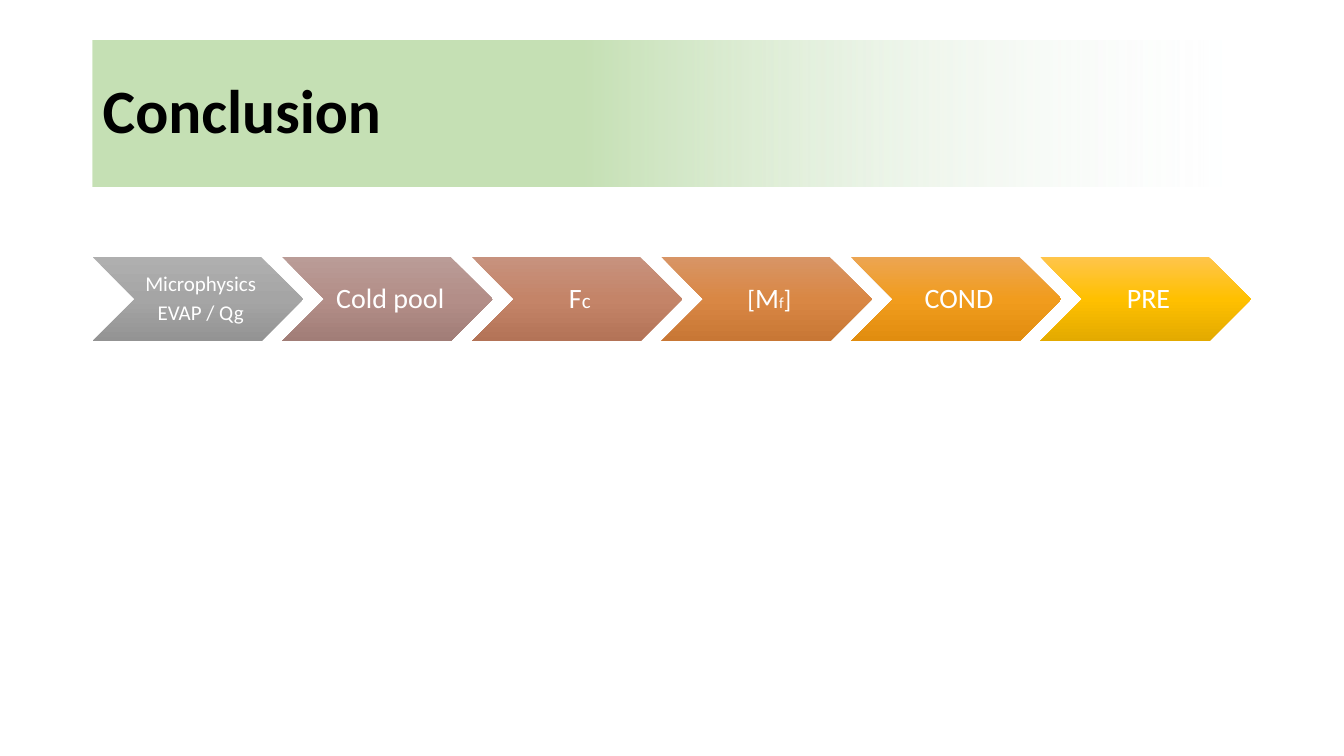
"""Build the conclusion slide with a chain of process chevrons."""
from lxml.etree import SubElement
from pptx import Presentation
from pptx.dml.color import RGBColor
from pptx.enum.shapes import MSO_SHAPE as Shape
from pptx.enum.text import MSO_ANCHOR as Anchor, MSO_AUTO_SIZE as AutoSize, PP_ALIGN as Align
from pptx.oxml.ns import qn
from pptx.util import Pt

BLACK = RGBColor(0x00, 0x00, 0x00)
WHITE = RGBColor(0xFF, 0xFF, 0xFF)
CLEAR = RGBColor(0xF7, 0xFA, 0xFD)
GREEN = RGBColor(0xC5, 0xE0, 0xB4)
GREYS = RGBColor(0xAF, 0xAF, 0xAF), RGBColor(0xA5, 0xA5, 0xA5), RGBColor(0x93, 0x93, 0x93)
MAUVES = RGBColor(0xBA, 0x9C, 0x97), RGBColor(0xB3, 0x8E, 0x88), RGBColor(0xA1, 0x7D, 0x77)
CLAYS = RGBColor(0xC7, 0x92, 0x7E), RGBColor(0xC4, 0x84, 0x68), RGBColor(0xB3, 0x73, 0x57)
RUSTS = RGBColor(0xD8, 0x95, 0x66), RGBColor(0xD9, 0x87, 0x44), RGBColor(0xC8, 0x77, 0x35)
ORANGES = RGBColor(0xEC, 0xA5, 0x52), RGBColor(0xF1, 0x9C, 0x1D), RGBColor(0xE1, 0x8D, 0x0F)
GOLDS = RGBColor(0xFF, 0xC5, 0x4B), RGBColor(0xFF, 0xC0, 0x00), RGBColor(0xE3, 0xAA, 0x00)

LEFT = 66.2
CHEVRON_TOP, CHEVRON_WIDTH, CHEVRON_HEIGHT, CHEVRON_PITCH = 183.6, 150.4, 60.2, 135.4
STEPS = [
    (GREYS, [[("Microphysics", 15)], [("EVAP / Qg", 15)]]),
    (MAUVES, [[("Cold pool", 20)]]),
    (CLAYS, [[("F", 20), ("c", 15)]]),
    (RUSTS, [[("[", 18), ("M", 20), ("f", 11), ("]", 18)]]),
    (ORANGES, [[("COND", 20)]]),
    (GOLDS, [[("PRE", 20)]]),
]


def apply(target, values):
    for name, value in values.items():
        setattr(target, name, value)


class SlideBuilder:
    font_name = "Calibri"
    line_spacing = 0.9

    def __init__(self, presentation):
        self.slide = presentation.slides.add_slide(presentation.slide_layouts[5])

    def gradient(self, shape, angle, stops):
        shape.fill.gradient()
        shape.fill.gradient_angle = angle
        stop_list = shape.element.spPr.find(qn("a:gradFill")).find(qn("a:gsLst"))
        for stop in list(stop_list):
            stop_list.remove(stop)
        for position, color, alpha in stops:
            stop = SubElement(stop_list, qn("a:gs"), pos=str(position * 1000))
            rgb = SubElement(stop, qn("a:srgbClr"), val=str(color))
            if alpha < 100:
                SubElement(rgb, qn("a:alpha"), val=str(alpha * 1000))

    def add_runs(self, paragraph, runs, color, bold, **layout):
        apply(paragraph, {"line_spacing": self.line_spacing, **layout})
        for text, size in runs:
            run = paragraph.add_run()
            run.text = text
            apply(run.font, {"name": self.font_name, "size": Pt(size), "bold": bold})
            run.font.color.rgb = color

    def title(self, text, left, top, width, height):
        title = self.slide.shapes.title
        apply(title, {"left": Pt(left), "top": Pt(top), "width": Pt(width), "height": Pt(height)})
        self.gradient(title, 180, [(0, CLEAR, 0), (58, GREEN, 100)])
        apply(title.text_frame, {"vertical_anchor": Anchor.MIDDLE, "auto_size": AutoSize.NONE,
                                 "word_wrap": True})
        self.add_runs(title.text_frame.paragraphs[0], [(text, 44)], BLACK, True,
                      alignment=Align.LEFT)

    def chevron(self, left, top, width, height, colors, lines):
        chevron = self.slide.shapes.add_shape(
            Shape.CHEVRON, Pt(left), Pt(top), Pt(width), Pt(height))
        chevron.shadow.inherit = False
        chevron.line.fill.background()
        self.gradient(chevron, 270, [(50 * i, color, 100) for i, color in enumerate(colors)])
        frame = chevron.text_frame
        apply(frame, {"vertical_anchor": Anchor.MIDDLE, "word_wrap": True, "margin_left": Pt(6),
                      "margin_right": Pt(2), "margin_top": Pt(2), "margin_bottom": Pt(2)})
        for number, runs in enumerate(lines):
            paragraph = frame.add_paragraph() if number else frame.paragraphs[0]
            self.add_runs(paragraph, runs, WHITE, False, alignment=Align.CENTER,
                          space_after=Pt(5))


def main():
    presentation = Presentation()
    apply(presentation, {"slide_width": Pt(960), "slide_height": Pt(540)})
    builder = SlideBuilder(presentation)
    builder.title("Conclusion", LEFT, 28.8, 828, 104.4)
    for number, (colors, lines) in enumerate(STEPS):
        builder.chevron(LEFT + number * CHEVRON_PITCH, CHEVRON_TOP, CHEVRON_WIDTH,
                        CHEVRON_HEIGHT, colors, lines)
    presentation.save("out.pptx")


if __name__ == "__main__":
    main()
